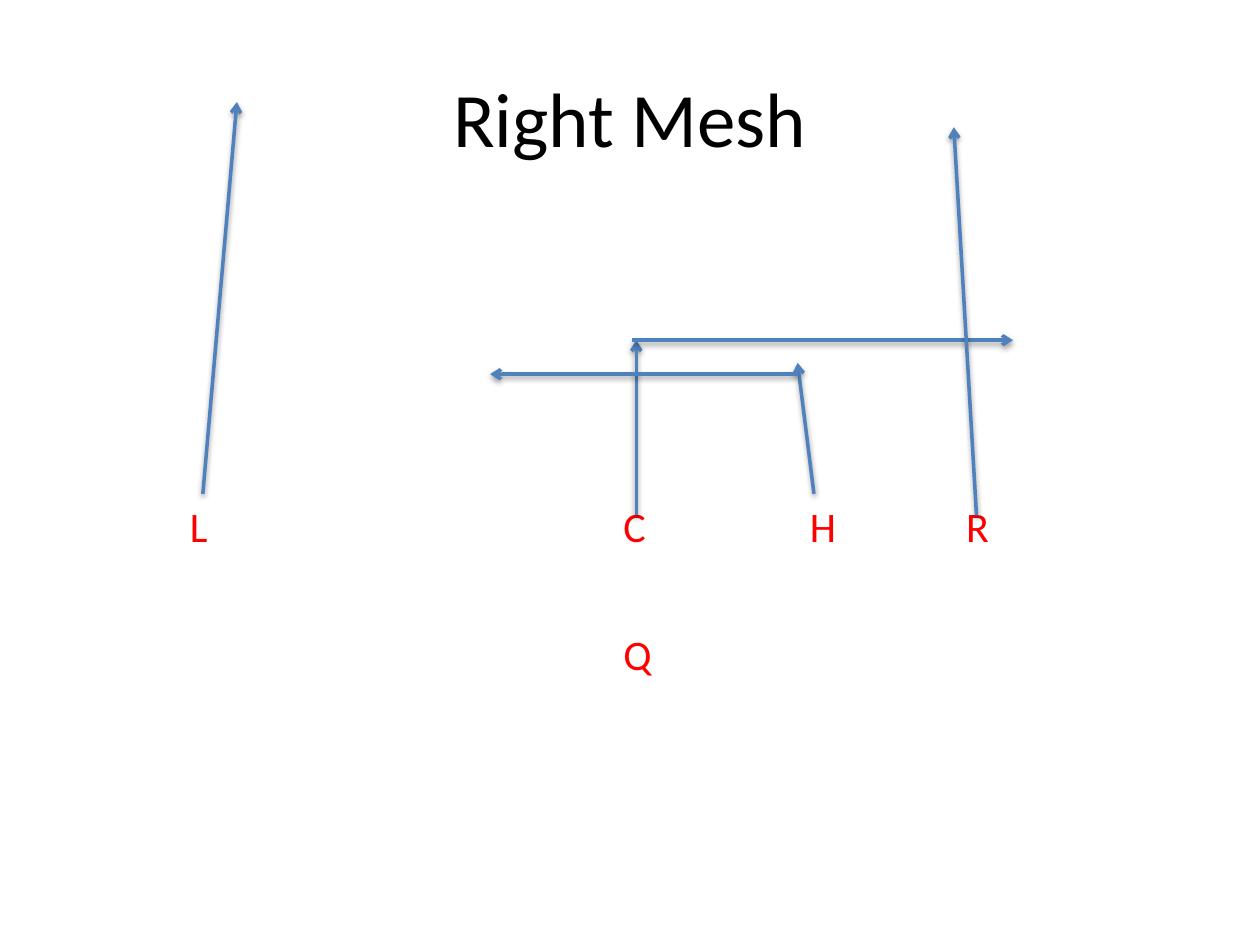
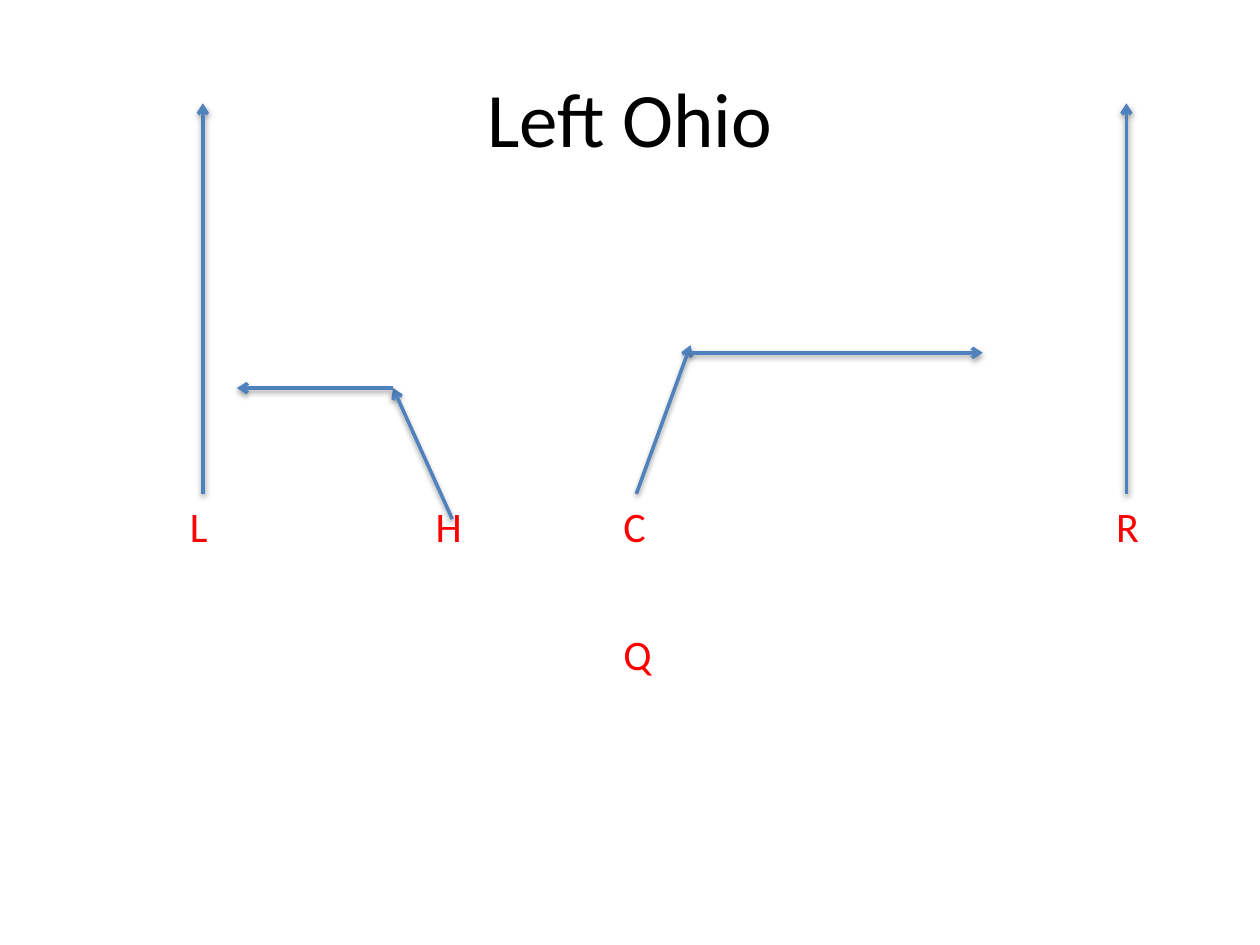
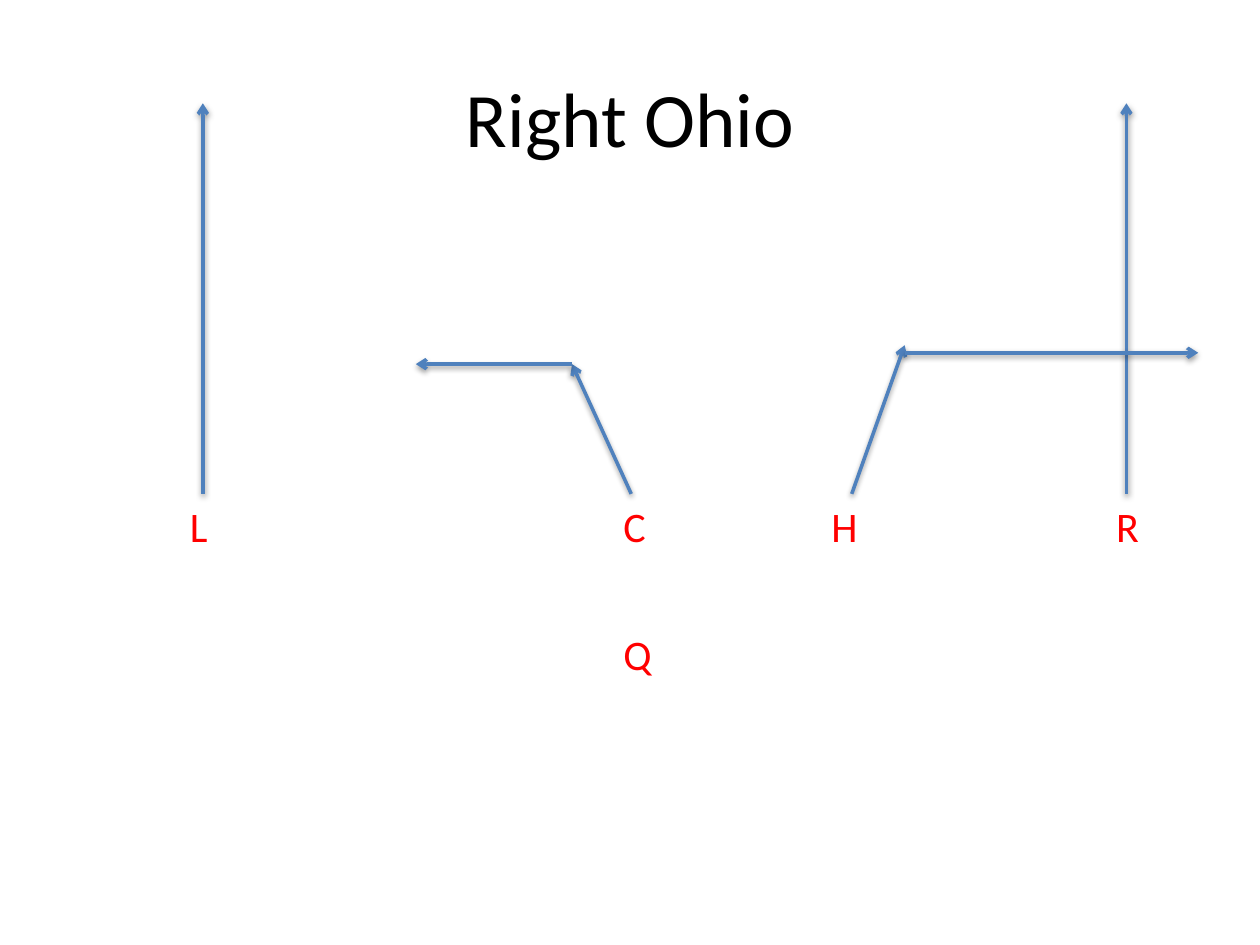
import pptx
import pptx.util
import pptx.dml.color
import pptx.enum.shapes
import pptx.enum.text
import pptx.oxml.ns
import lxml.etree

RED = pptx.dml.color.RGBColor(0xFF, 0x00, 0x00)
BLUE = pptx.dml.color.RGBColor(0x4F, 0x81, 0xBD)
BLACK = pptx.dml.color.RGBColor(0x00, 0x00, 0x00)
FONT = "Calibri"
Inches = pptx.util.Inches

# Field grid in inches: columns of the fixed players, rows of the formation
LEFT, CENTER, WIDE = 1.41, 4.85, 8.76
LINE_ROW, BACK_ROW = 3.92, 4.94
LABEL_W, LABEL_H = 0.47, 0.5
DEEP = 0.82

# Straight deep routes of the two outside receivers
GO_ROUTES = [
    (1.61, LINE_ROW, 1.61, DEEP),
    (8.94, LINE_ROW, 8.94, DEEP),
]

# Each play: title, column of H, column of R, routes as (x1, y1, x2, y2)
PLAYS = [
    ("Right Mesh", 6.33, 7.57, [
        (1.61, LINE_ROW, 1.88, 0.81),
        (5.05, 4.09, 5.05, 2.7),
        (5.02, 2.7, 8.04, 2.7),
        (6.46, LINE_ROW, 6.33, 2.88),
        (6.33, 2.97, 3.89, 2.97),
        (7.75, 4.09, 7.57, 1.01),
    ]),
    ("Left Ohio", 3.36, WIDE, GO_ROUTES + [
        (5.05, LINE_ROW, 5.48, 2.74),
        (5.48, 2.8, 7.8, 2.8),
        (3.59, 4.12, 3.12, 3.08),
        (3.12, 3.08, 1.88, 3.08),
    ]),
    ("Right Ohio", 6.5, WIDE, GO_ROUTES + [
        (6.76, LINE_ROW, 7.18, 2.74),
        (7.18, 2.8, 9.51, 2.8),
        (5.01, LINE_ROW, 4.54, 2.89),
        (4.54, 2.89, 3.3, 2.89),
    ]),
]


def style_text(tf, size, color):
    font = tf.paragraphs[0].runs[0].font
    font.name = FONT
    font.size = pptx.util.Pt(size)
    font.color.rgb = color


prs = pptx.Presentation()
prs.slide_width, prs.slide_height = Inches(10), Inches(7.5)

for title, h_col, r_col, routes in PLAYS:
    s = prs.slides.add_slide(prs.slide_layouts[5])

    # Title
    sp = s.shapes.title
    sp.left, sp.top = Inches(0.5), Inches(0.3)
    sp.width, sp.height = Inches(9), Inches(1.25)
    sp.text_frame.text = title
    style_text(sp.text_frame, 44, BLACK)

    # Players
    players = [
        ("L", LEFT, LINE_ROW),
        ("Q", CENTER, BACK_ROW),
        ("R", r_col, LINE_ROW),
        ("C", CENTER, LINE_ROW),
        ("H", h_col, LINE_ROW),
    ]
    for name, x, y in players:
        sp = s.shapes.add_textbox(Inches(x), Inches(y), Inches(LABEL_W), Inches(LABEL_H))
        tf = sp.text_frame
        tf.word_wrap = True
        tf.auto_size = pptx.enum.text.MSO_AUTO_SIZE.SHAPE_TO_FIT_TEXT
        tf.text = name
        style_text(tf, 24, RED)

    # Routes, with the theme's soft shadow
    for route in routes:
        cx = s.shapes.add_connector(
            pptx.enum.shapes.MSO_CONNECTOR.STRAIGHT, *[Inches(v) for v in route])
        cx.line.color.rgb = BLUE
        cx.line.width = pptx.util.Pt(2)
        ln = cx.line.fill._xPr
        lxml.etree.SubElement(ln, pptx.oxml.ns.qn("a:tailEnd"), type="arrow")

prs.save("out.pptx")
